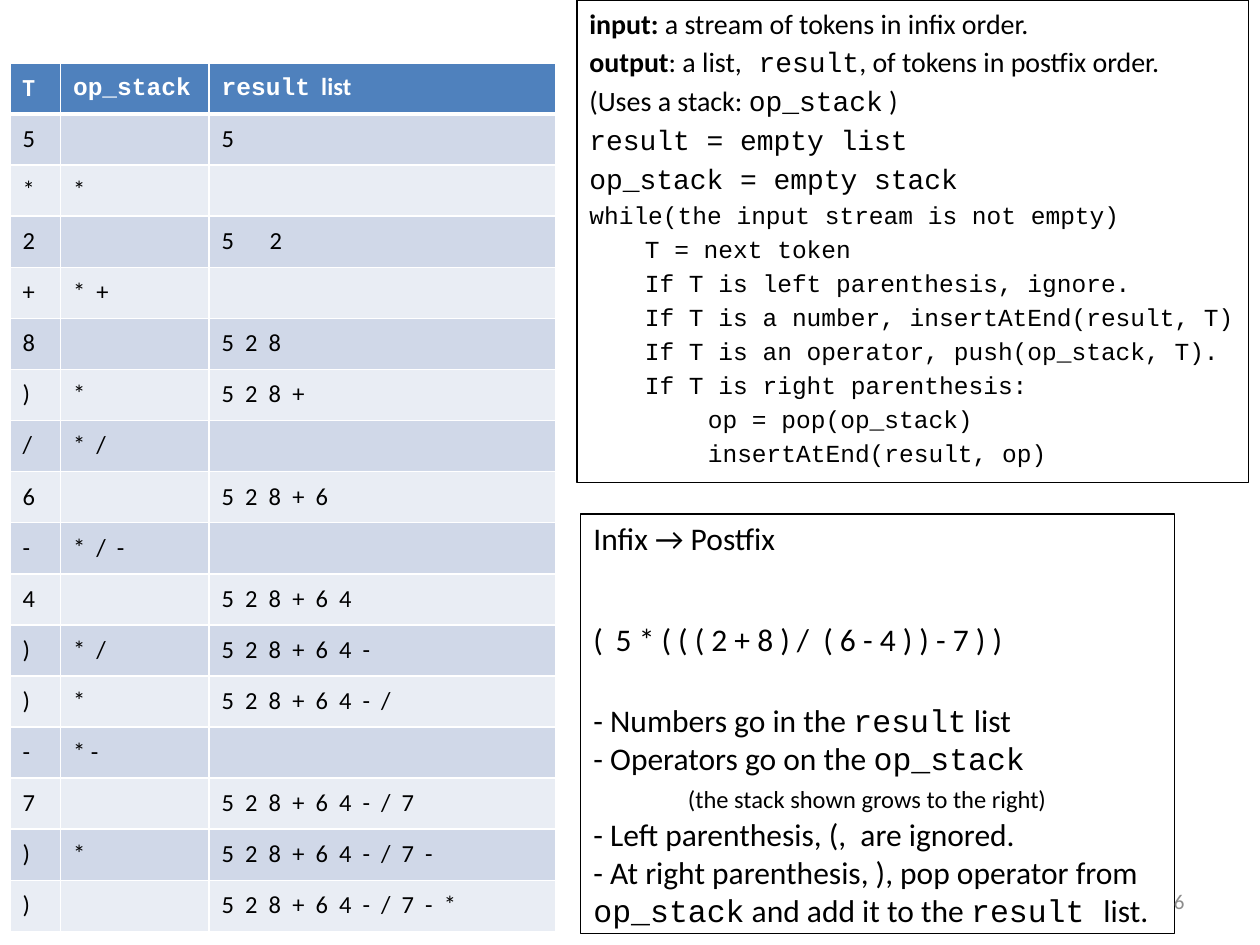
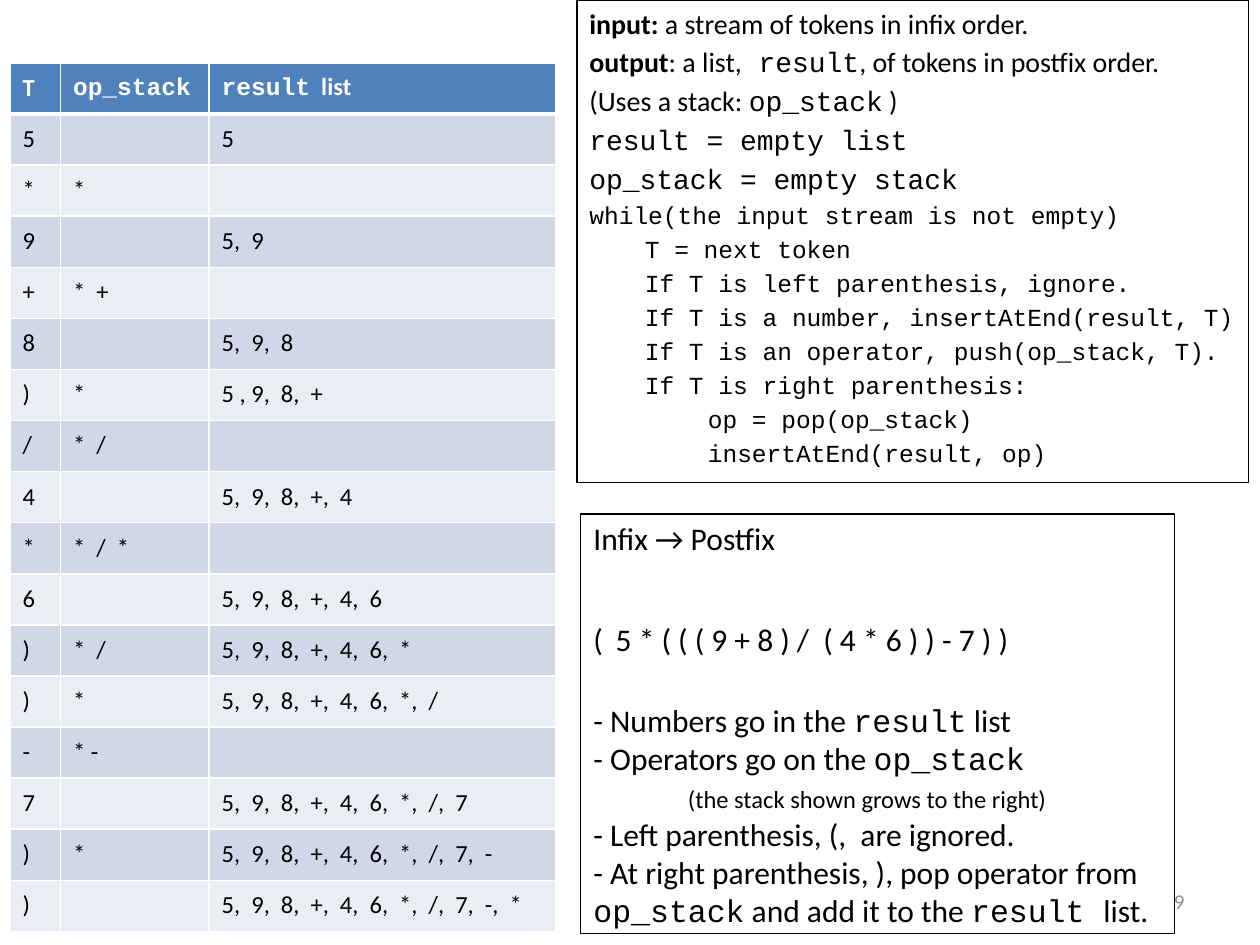
from lxml import etree
from pptx import Presentation
from pptx.dml.color import RGBColor
from pptx.enum.shapes import MSO_SHAPE
from pptx.enum.text import MSO_ANCHOR, MSO_AUTO_SIZE, PP_ALIGN
from pptx.oxml.ns import qn
from pptx.util import Inches, Pt

COLORS = {
    "ink": "000000",
    "white": "FFFFFF",
    "head": "4F81BD",
    "odd": "D0D8E8",
    "even": "E9EDF4",
    "page": "8C8C8C",
}
SANS = "Calibri"
MONO = "Courier New"


def tint(name):
    return RGBColor.from_string(COLORS[name])


def code(text):
    return text, {"face": MONO}


def bold(text):
    return text, {"bold": True}


def indent(para, left, first=0):
    props = para._p.get_or_add_pPr()
    props.set("marL", str(Inches(left)))
    props.set("indent", str(Inches(first)))
    return props


def write(para, *parts, align=PP_ALIGN.LEFT, before=0, line=None, left=0, **style):
    para.alignment = align
    para.space_before = Pt(before)
    if line:
        para.line_spacing = Pt(line)
    indent(para, left)
    for part in parts:
        text, extra = (part, {}) if isinstance(part, str) else part
        look = {"face": SANS, "size": 18, "color": "ink", "bold": False, **style, **extra}
        run = para.add_run()
        run.text = text
        run.font.name = look["face"]
        run.font.size = Pt(look["size"])
        run.font.bold = look["bold"]
        run.font.color.rgb = tint(look["color"])


def fill_frame(frame, lines):
    for index, (parts, style) in enumerate(lines):
        para = frame.add_paragraph() if index else frame.paragraphs[0]
        write(para, *parts, **style)


def number(para, start):
    props = indent(para, 0.38, -0.38)
    mark = etree.SubElement(props, qn("a:buAutoNum"))
    mark.set("type", "arabicPlain")
    mark.set("startAt", start)


def border(cell, widths):
    props = cell._tc.get_or_add_tcPr()
    for index, (side, width) in enumerate(widths.items()):
        edge = etree.Element(qn(f"a:ln{side}"), w=str(Pt(width)))
        solid = etree.SubElement(edge, qn("a:solidFill"))
        etree.SubElement(solid, qn("a:srgbClr"), val=COLORS["white"])
        props.insert(index, edge)


class Deck:
    def __init__(self):
        self.show = Presentation()
        self.show.slide_width = Inches(10)
        self.show.slide_height = Inches(7.5)
        self.slide = None

    def start(self):
        self.slide = self.show.slides.add_slide(self.show.slide_layouts[5])

    def outline(self, shape):
        shape.line.color.rgb = tint("ink")
        shape.line.width = Pt(0.75)

    def title(self, box, lines):
        shape = self.slide.shapes.title
        shape.left, shape.top, shape.width, shape.height = map(Inches, box)
        self.outline(shape)
        frame = shape.text_frame
        frame.word_wrap = True
        frame.auto_size = MSO_AUTO_SIZE.NONE
        frame.vertical_anchor = MSO_ANCHOR.MIDDLE
        fill_frame(frame, lines)

    def panel(self, box, lines):
        shape = self.slide.shapes.add_shape(MSO_SHAPE.RECTANGLE, *map(Inches, box))
        shape.shadow.inherit = False
        shape.fill.background()
        self.outline(shape)
        frame = shape.text_frame
        frame.word_wrap = True
        frame.vertical_anchor = MSO_ANCHOR.TOP
        fill_frame(frame, lines)

    def label(self, box, text, **style):
        frame = self.slide.shapes.add_textbox(*map(Inches, box)).text_frame
        frame.word_wrap = True
        frame.vertical_anchor = MSO_ANCHOR.MIDDLE
        write(frame.paragraphs[0], text, **style)

    def table(self, box, widths, rows, listed):
        grid = self.slide.shapes.add_table(len(rows), len(widths), *map(Inches, box)).table
        for column, width in zip(grid.columns, widths):
            column.width = Inches(width)
        for r, row in enumerate(rows):
            shade = "head" if r == 0 else "odd" if r % 2 else "even"
            for c, parts in enumerate(row):
                cell = grid.cell(r, c)
                cell.fill.solid()
                cell.fill.fore_color.rgb = tint(shade)
                border(cell, {"L": 1, "R": 1, "T": 3 if r == 1 else 1, "B": 1 if r else 3})
                para = cell.text_frame.paragraphs[0]
                color = "ink" if r else "white"
                write(para, *parts, size=14, line=19.2, color=color, bold=r == 0)
                if (r, c) in listed:
                    number(para, listed[r, c])


def trace(tokens, gap, fixes):
    stack, result = [], []
    rows = [(["T"], [code("op_stack")], [code("result"), "  list"])]
    for token in tokens:
        pushed, listed = "", ""
        if token.isdigit():
            result.append(token)
        elif token == ")":
            result.append(stack.pop())
        else:
            stack.append(token)
        if not token.isdigit():
            pushed = "  ".join(stack)
        if token.isdigit() or token == ")":
            listed = gap.join(result)
        row = [token, pushed, listed]
        for c in range(3):
            row[c] = fixes.get((len(rows), c), row[c])
        rows.append([[text] if text else [] for text in row])
    return rows


def rules(formula):
    return [
        (["Infix → Postfix"], {}),
        (["(", (" ", {"size": 32}), formula], {"before": 22}),
        (["- Numbers go in the ", code("result"), " list"], {"before": 22}),
        (["- Operators go on the ", code("op_stack")], {}),
        (["(the stack shown grows to the right)"], {"size": 14, "left": 0.75, "before": 4}),
        (["- Left parenthesis, (,  are ignored."], {"before": 1}),
        (["- At right parenthesis, ), pop operator from ", code("op_stack"),
          " and add it to the ", code("result "), "list."], {}),
    ]


def steps():
    intro = [
        [bold("input: "), "a stream of tokens in infix order."],
        [bold("output"), ": a list,", code(" result"), ", of tokens in postfix order."],
        ["(Uses a stack: ", code("op_stack"), " )"],
        [code("result = empty list")],
        [code("op_stack = empty stack")],
    ]
    loop = [
        (0, "while(the input stream is not empty)"),
        (0.44, "T = next token"),
        (0.44, "If T is left parenthesis, ignore."),
        (0.44, "If T is a number, insertAtEnd(result, T)"),
        (0.44, "If T is an operator, push(op_stack, T)."),
        (0.44, "If T is right parenthesis:"),
        (0.94, "op = pop(op_stack)"),
        (0.94, "insertAtEnd(result, op)"),
    ]
    head = [(parts, {"size": 16, "before": 3}) for parts in intro]
    body = [([code(text)], {"size": 14, "before": 2.6, "left": left}) for left, text in loop]
    return head + body


CASES = [
    {
        "page": "6",
        "formula": "5 * ( ( ( 2 + 8 ) /  ( 6 - 4 ) ) - 7 ) )",
        "gap": "  ",
        "fixes": {(3, 2): "2", (13, 1): "* -"},
        "listed": {(3, 2): "5"},
    },
    {
        "page": "9",
        "formula": "5 * ( ( ( 9 + 8 ) /  ( 4 * 6 ) ) - 7 ) )",
        "gap": ",  ",
        "fixes": {(6, 2): "5 , 9,  8,  +", (13, 1): "* -"},
        "listed": {},
    },
]


def main():
    deck = Deck()
    for case in CASES:
        tokens = [t for t in case["formula"].split() if t != "("]
        rows = trace(tokens, case["gap"], case["fixes"])
        deck.start()
        deck.title((4.61, 4.08, 4.71, 3.33), rules(case["formula"]))
        deck.table((0.08, 0.5, 4.33, 6.89), (0.4, 1.18, 2.75), rows, case["listed"])
        deck.label((7.17, 6.95, 2.33, 0.4), case["page"],
                   size=12, color="page", align=PP_ALIGN.RIGHT)
        deck.panel((4.58, 0, 5.33, 3.83), steps())
    deck.show.save("out.pptx")


if __name__ == "__main__":
    main()
